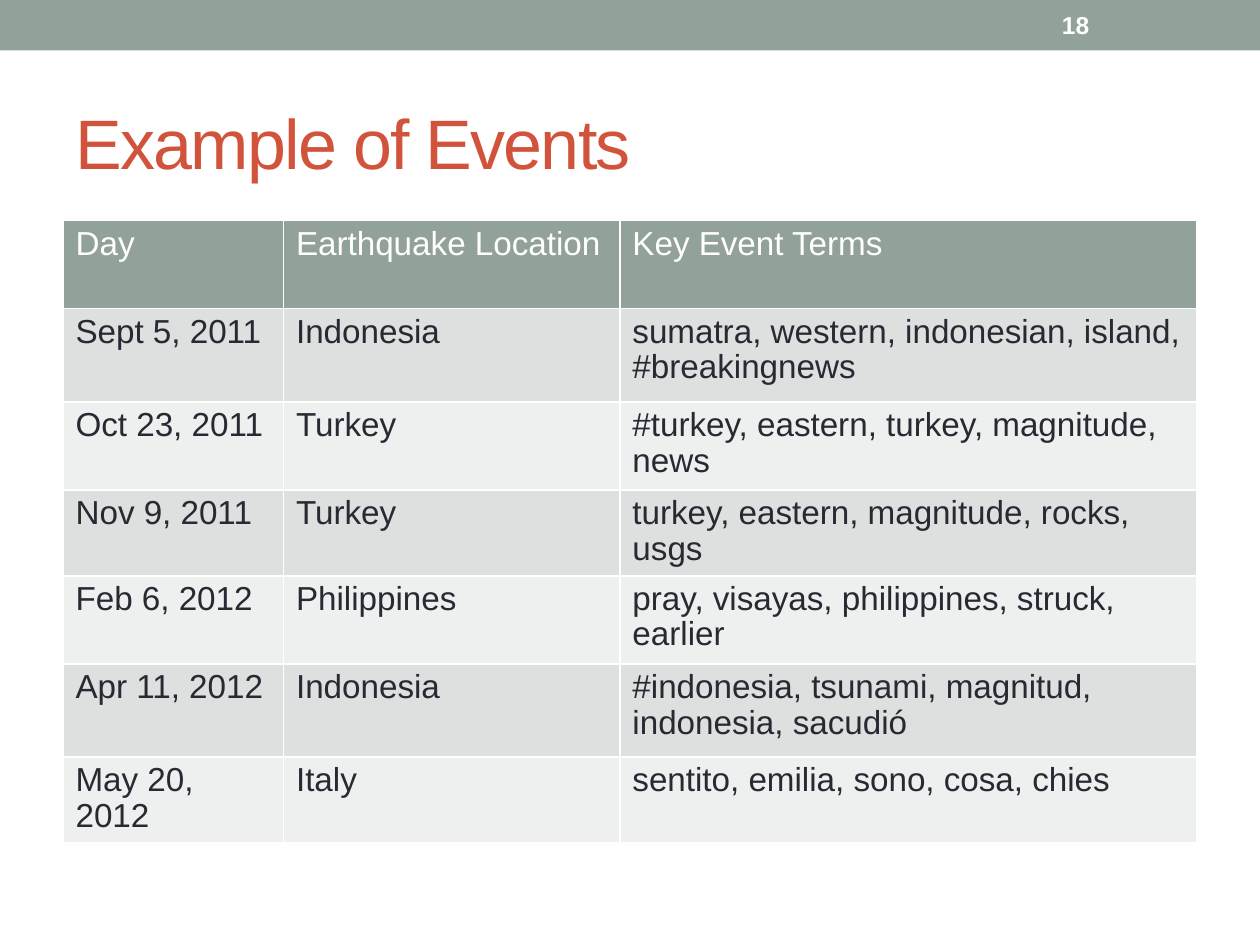
from lxml import etree
from pptx import Presentation
from pptx.dml.color import RGBColor
from pptx.enum.shapes import MSO_SHAPE
from pptx.enum.text import MSO_ANCHOR, PP_ALIGN
from pptx.oxml.ns import qn
from pptx.util import Inches, Pt

RECTANGLE = MSO_SHAPE.RECTANGLE
MIDDLE = MSO_ANCHOR.MIDDLE
LEFT = PP_ALIGN.LEFT

SAGE = RGBColor(0x93, 0xA2, 0x99)
RUST = RGBColor(0xD2, 0x53, 0x3C)
INK = RGBColor(0x29, 0x29, 0x34)
WHITE = RGBColor(0xFF, 0xFF, 0xFF)
BANDS = [RGBColor(0xDC, 0xE0, 0xDE), RGBColor(0xEE, 0xF0, 0xEF)]

EVENTS = [
    ("Day", "Earthquake Location", "Key Event Terms"),
    ("Sept 5, 2011", "Indonesia", "sumatra, western, indonesian, island, #breakingnews"),
    ("Oct 23, 2011", "Turkey", "#turkey, eastern, turkey, magnitude, news"),
    ("Nov 9, 2011", "Turkey", "turkey, eastern, magnitude, rocks, usgs"),
    ("Feb 6, 2012", "Philippines", "pray, visayas, philippines, struck, earlier"),
    ("Apr 11, 2012", "Indonesia", "#indonesia, tsunami, magnitud, indonesia, sacudió"),
    ("May 20, 2012", "Italy", "sentito, emilia, sono, cosa, chies"),
]
COLUMN_WIDTHS = [1.75, 2.67, 4.58]
ROW_HEIGHTS = [0.7, 0.74, 0.7, 0.68, 0.7, 0.74, 0.68]


def write(frame, text, size, color, bold=False, line_spacing=None, tracking=None):
    """Fill a text frame with one left-aligned Arial paragraph."""
    frame.word_wrap = True
    para = frame.paragraphs[0]
    para.alignment = LEFT
    para.line_spacing = line_spacing
    span = para.add_run()
    span.text = text
    span.font.name = "Arial"
    span.font.size = Pt(size)
    span.font.bold = bold
    span.font.color.rgb = color
    if tracking:
        span.font._element.set("spc", str(tracking * 100))


def add_borders(cell, color, width):
    properties = cell._tc.get_or_add_tcPr()
    for position, side in enumerate(("lnL", "lnR", "lnT", "lnB")):
        line = etree.Element(qn(f"a:{side}"), w=str(Pt(width)))
        fill = etree.SubElement(line, qn("a:solidFill"))
        etree.SubElement(fill, qn("a:srgbClr"), val=str(color))
        properties.insert(position, line)


deck = Presentation()
deck.slide_width, deck.slide_height = Inches(10), Inches(7.5)
page = deck.slides.add_slide(deck.slide_layouts[5])
margin = Inches(0.5)
content_width = deck.slide_width - 2 * margin

band = page.shapes.add_shape(RECTANGLE, 0, 0, deck.slide_width, Inches(0.4))
band.shadow.inherit = False
band.fill.solid()
band.fill.fore_color.rgb = SAGE
band.line.fill.background()

title = page.shapes.title
title.left, title.top = margin, Inches(0.58)
title.width, title.height = content_width, Inches(1.08)
title.text_frame.vertical_anchor = MIDDLE
write(title.text_frame, "Example of Events", 40, RUST, tracking=-1)

table = page.shapes.add_table(
    len(EVENTS), len(COLUMN_WIDTHS), margin, Inches(1.75),
    content_width, Inches(sum(ROW_HEIGHTS)),
).table
for column, width in zip(table.columns, COLUMN_WIDTHS):
    column.width = Inches(width)
for row, height in zip(table.rows, ROW_HEIGHTS):
    row.height = Inches(height)

for row_index, event in enumerate(EVENTS):
    is_header = row_index == 0
    for column_index, text in enumerate(event):
        cell = table.cell(row_index, column_index)
        cell.fill.solid()
        cell.fill.fore_color.rgb = SAGE if is_header else BANDS[(row_index - 1) % 2]
        add_borders(cell, WHITE, 1)
        write(cell.text_frame, text, 19, WHITE if is_header else INK, line_spacing=0.96)

number_box = page.shapes.add_textbox(
    Inches(8.33), Inches(0.02), Inches(1.17), Inches(0.36)
)
number_box.text_frame.vertical_anchor = MIDDLE
write(number_box.text_frame, "18", 14, WHITE, bold=True)

deck.save("out.pptx")
